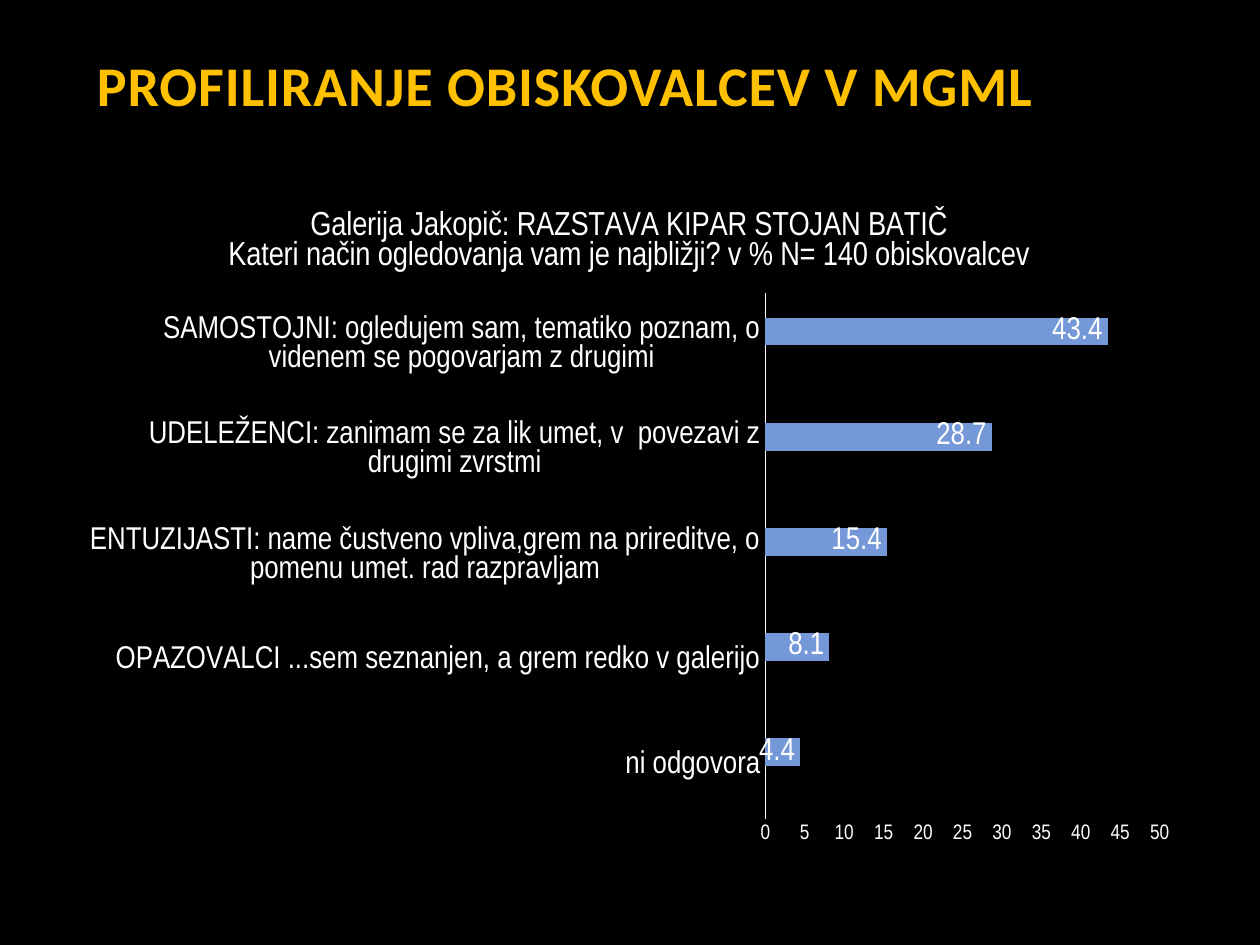
from lxml.etree import SubElement
from pptx import Presentation
from pptx.chart.data import CategoryChartData
from pptx.dml.color import RGBColor
from pptx.enum.chart import XL_CHART_TYPE, XL_LABEL_POSITION, XL_TICK_MARK
from pptx.enum.text import MSO_ANCHOR, MSO_AUTO_SIZE, PP_ALIGN
from pptx.oxml.ns import qn
from pptx.util import Cm, Pt

WHITE, BLACK, GOLD, ORANGE, BLUE = "FFFFFF", "000000", "FFC000", "FE8637", "7598D9"
TITLE = "PROFILIRANJE OBISKOVALCEV V MGML"
CHART_TITLE = [
    "Galerija Jakopič: RAZSTAVA KIPAR STOJAN BATIČ",
    "Kateri način ogledovanja vam je najbližji? v % N= 140 obiskovalcev",
]
ANSWERS = {
    "ni odgovora": 4.4,
    "OPAZOVALCI ...sem seznanjen, a grem redko v galerijo": 8.1,
    "ENTUZIJASTI: name čustveno vpliva,grem na prireditve, o pomenu umet. rad razpravljam": 15.4,
    "UDELEŽENCI: zanimam se za lik umet, v  povezavi z drugimi zvrstmi": 28.7,
    "SAMOSTOJNI: ogledujem sam, tematiko poznam, o videnem se pogovarjam z drugimi": 43.4,
}


def color(value):
    return RGBColor.from_string(value)


def format_font(font, size, name="Arial Narrow", fill=WHITE, bold=False):
    font.size, font.name, font.bold = Pt(size), name, bold
    font.color.rgb = color(fill)


def add_text(paragraph, text, spacing=None, **style):
    run = paragraph.add_run()
    run.text = text
    format_font(run.font, **style)
    if spacing:
        run.font._element.set("spc", str(round(spacing * 100)))


def set_layout(element, **values):
    layout = element.find(qn("c:layout"))
    if layout is None:
        layout = element.makeelement(qn("c:layout"))
        text = element.find(qn("c:tx"))
        element.insert(0 if text is None else element.index(text) + 1, layout)
    manual = SubElement(layout, qn("c:manualLayout"))
    for tag, value in values.items():
        SubElement(manual, qn(f"c:{tag}")).set("val", str(value))


class SlideBuilder:
    """Hold the slide style and add each kind of element."""

    def __init__(self, presentation):
        self.slide = presentation.slides.add_slide(presentation.slide_layouts[5])
        background = self.slide.background.fill
        background.solid()
        background.fore_color.rgb = color(BLACK)

    def title(self, text, left, top, width, height):
        shape = self.slide.shapes.title
        shape.left, shape.top, shape.width, shape.height = map(Cm, (left, top, width, height))
        frame = shape.text_frame
        frame.word_wrap, frame.auto_size = True, MSO_AUTO_SIZE.NONE
        frame.vertical_anchor = MSO_ANCHOR.BOTTOM
        paragraph = frame.paragraphs[0]
        paragraph.alignment = PP_ALIGN.LEFT
        add_text(paragraph, text, spacing=0.5, size=32, name="Calibri", fill=GOLD, bold=True)

    def bar_chart(self, answers, title_lines, left, top, width, height):
        data = CategoryChartData()
        data.categories = list(answers)
        data.add_series("Series 1", [None] * len(answers))
        data.add_series("Series 2", list(answers.values()))
        frame = self.slide.shapes.add_chart(
            XL_CHART_TYPE.BAR_CLUSTERED, *map(Cm, (left, top, width, height)), data)
        chart = frame.chart
        format_font(chart.font, size=10)
        chart.has_legend = False
        self.chart_title(chart, title_lines)
        self.chart_axes(chart)
        self.chart_series(chart)
        set_layout(chart._chartSpace.chart.plotArea, layoutTarget="inner",
                   xMode="edge", yMode="edge", x=0.62, y=0.16, w=0.35, h=0.78)

    def chart_title(self, chart, lines):
        chart.has_title = True
        frame = chart.chart_title.text_frame
        for index, line in enumerate(lines):
            paragraph = frame.add_paragraph() if index else frame.paragraphs[0]
            paragraph.alignment = PP_ALIGN.CENTER
            add_text(paragraph, line, size=19)
        set_layout(chart.chart_title._element, xMode="edge", yMode="edge", x=0.14, y=0.03)

    def chart_axes(self, chart):
        for axis, size in ((chart.category_axis, 18), (chart.value_axis, 12)):
            axis.major_tick_mark = axis.minor_tick_mark = XL_TICK_MARK.NONE
            axis.has_major_gridlines = False
            format_font(axis.tick_labels.font, size=size)
        line = chart.category_axis.format.line
        line.color.rgb, line.width = color(WHITE), Pt(0.75)
        axis = chart.value_axis
        axis.format.line.fill.background()
        axis.minimum_scale, axis.maximum_scale, axis.major_unit = 0, 50, 5

    def chart_series(self, chart):
        plot = chart.plots[0]
        plot.gap_width, plot.overlap, plot.vary_by_categories = 182, 0, False
        for series, fill, size in zip(plot.series, (ORANGE, BLUE), (12, 18)):
            series.format.fill.solid()
            series.format.fill.fore_color.rgb = color(fill)
            labels = series.data_labels
            labels.show_value, labels.position = True, XL_LABEL_POSITION.INSIDE_END
            format_font(labels.font, size=size)


def main():
    presentation = Presentation()
    presentation.slide_width, presentation.slide_height = Cm(25.4), Cm(19.05)
    builder = SlideBuilder(presentation)
    builder.title(TITLE, 1.7, 0.76, 22.02, 1.75)
    builder.bar_chart(ANSWERS, CHART_TITLE, 1.35, 3.73, 22.71, 13.59)
    presentation.save("out.pptx")


if __name__ == "__main__":
    main()
